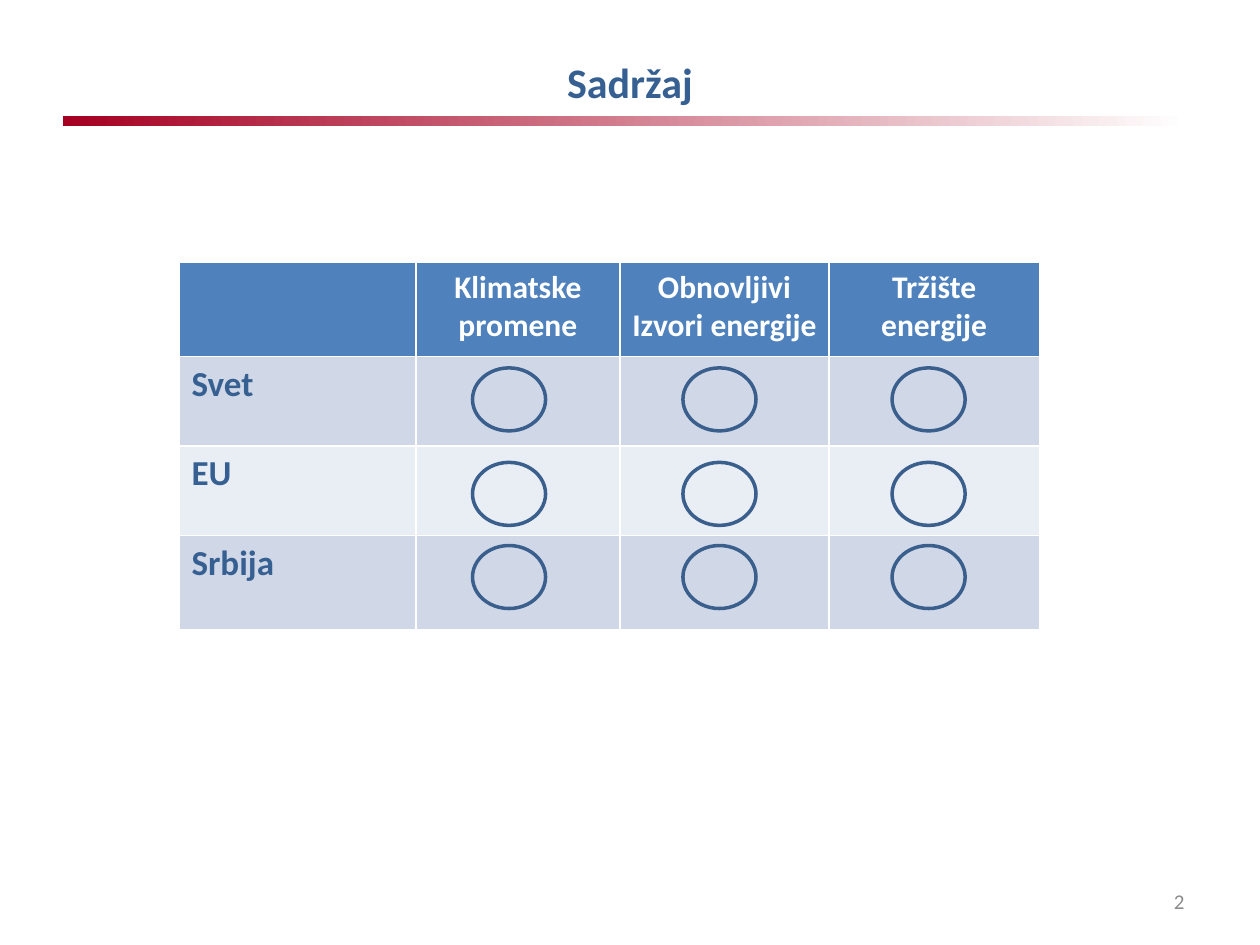
from pptx import Presentation
from pptx.dml.color import RGBColor
from pptx.enum import shapes, text
from pptx.util import Inches, Pt

TITLE = "Sadržaj"
PAGE = "2"
HEADERS = [[], ["Klimatske promene"], ["Obnovljivi", "Izvori energije"], ["Tržište energije"]]
REGIONS = ["Svet", "EU", "Srbija"]

FONT = "Calibri"
NAVY = RGBColor(0x37, 0x60, 0x92)
OUTLINE = RGBColor(0x3A, 0x5F, 0x8C)
CRIMSON = RGBColor(0xA5, 0x00, 0x21)
WHITE = RGBColor(0xFF, 0xFF, 0xFF)
GREY = RGBColor(0x8C, 0x8C, 0x8C)
HEADER_FILL = RGBColor(0x4F, 0x81, 0xBD)
BANDS = [RGBColor(0xD0, 0xD8, 0xE8), RGBColor(0xE9, 0xED, 0xF4)]

TABLE_LEFT, TABLE_TOP = 1.42, 2.08
COL_WIDTHS = [1.88, 1.62, 1.66, 1.67]
ROW_HEIGHTS = [0.75, 0.71, 0.71, 0.75]
HEADER_MARGIN = 0.08
CIRCLE_LEFTS = [3.75, 5.42, 7.08]
CIRCLE_TOPS = [2.92, 3.67, 4.33]
CIRCLE_SIZE = (0.58, 0.5)


def box(left, top, width, height):
    return [Inches(v) for v in (left, top, width, height)]


def write(tf, lines, size, color, bold=True, align=text.PP_ALIGN.LEFT):
    for i, line in enumerate(lines):
        p = tf.add_paragraph() if i else tf.paragraphs[0]
        p.alignment = align
        r = p.add_run()
        r.text = line
        r.font.name, r.font.size, r.font.bold = FONT, Pt(size), bold
        r.font.color.rgb = color


def add_title(s):
    title = s.shapes.title
    title.left, title.top, title.width, title.height = box(0.5, 0.3, 9, 0.7)
    title.text_frame.vertical_anchor = text.MSO_ANCHOR.MIDDLE
    write(title.text_frame, [TITLE], 24, NAVY, align=text.PP_ALIGN.CENTER)

    rule = s.shapes.add_shape(shapes.MSO_SHAPE.RECTANGLE, *box(0.5, 0.92, 8.92, 0.08))
    rule.shadow.inherit = False
    rule.line.fill.background()
    rule.fill.gradient()
    rule.fill.gradient_angle = 0
    for stop, color, position in zip(rule.fill.gradient_stops, (CRIMSON, WHITE), (0, 1)):
        stop.color.rgb = color
        stop.position = position


def add_topics_table(s):
    """The default table style supplies the white grid and the thick header rule."""
    table = s.shapes.add_table(
        len(ROW_HEIGHTS), len(COL_WIDTHS),
        *box(TABLE_LEFT, TABLE_TOP, sum(COL_WIDTHS), sum(ROW_HEIGHTS))).table
    for column, width in zip(table.columns, COL_WIDTHS):
        column.width = Inches(width)
    for i, (row, height) in enumerate(zip(table.rows, ROW_HEIGHTS)):
        row.height = Inches(height)
        for cell in row.cells:
            cell.fill.solid()
            cell.fill.fore_color.rgb = BANDS[(i - 1) % 2] if i else HEADER_FILL
    for col, lines in enumerate(HEADERS):
        cell = table.cell(0, col)
        cell.margin_left = cell.margin_right = Inches(HEADER_MARGIN)
        write(cell.text_frame, lines, 18, WHITE, align=text.PP_ALIGN.CENTER)
    for row, region in enumerate(REGIONS, 1):
        write(table.cell(row, 0).text_frame, [region], 20, NAVY)


def add_circles(s):
    for top in CIRCLE_TOPS:
        for left in CIRCLE_LEFTS:
            circle = s.shapes.add_shape(shapes.MSO_SHAPE.OVAL, *box(left, top, *CIRCLE_SIZE))
            circle.shadow.inherit = False
            circle.fill.background()
            circle.line.color.rgb = OUTLINE
            circle.line.width = Pt(2)


def add_page_number(s):
    tf = s.shapes.add_textbox(*box(7.17, 6.95, 2.33, 0.4)).text_frame
    tf.word_wrap = True
    tf.vertical_anchor = text.MSO_ANCHOR.MIDDLE
    write(tf, [PAGE], 12, GREY, bold=False, align=text.PP_ALIGN.RIGHT)


def main():
    prs = Presentation()
    prs.slide_width, prs.slide_height = Inches(10), Inches(7.5)
    s = prs.slides.add_slide(prs.slide_layouts[5])
    add_title(s)
    add_topics_table(s)
    add_circles(s)
    add_page_number(s)
    prs.save("out.pptx")


if __name__ == "__main__":
    main()
